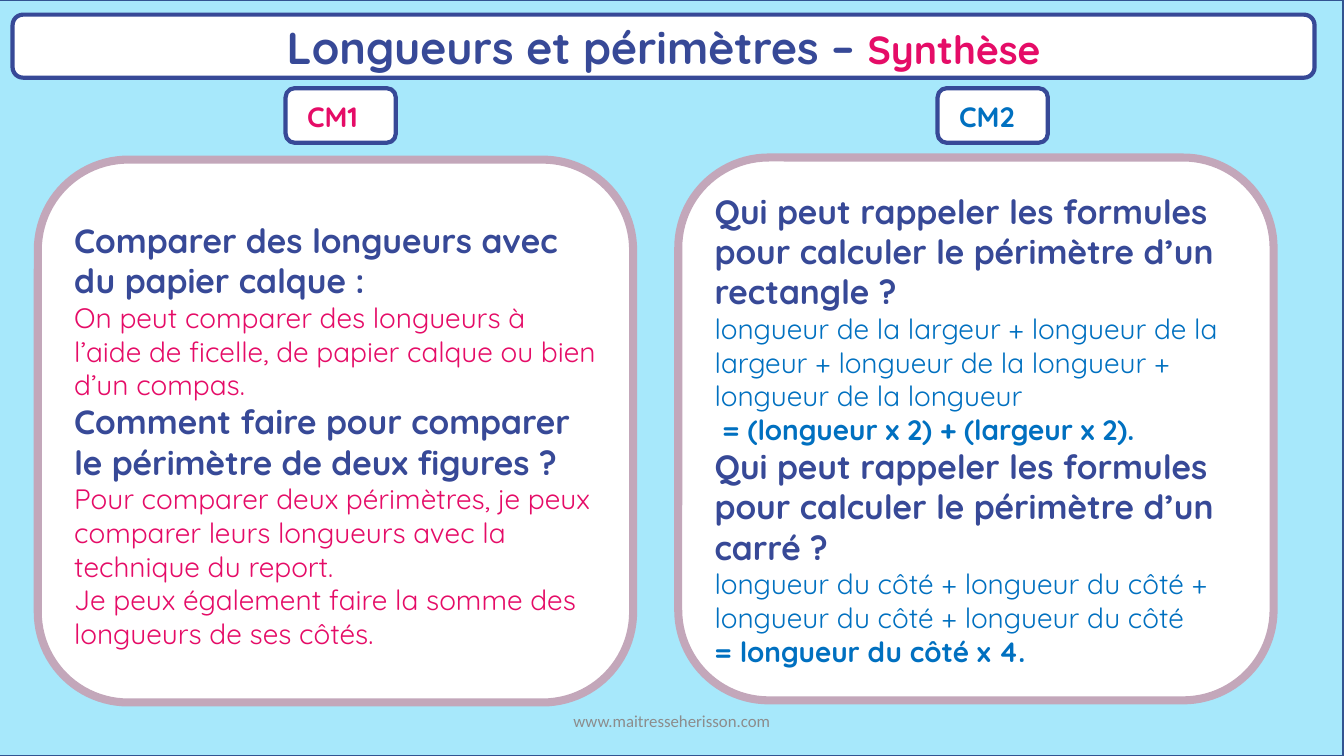
from pptx import Presentation
from pptx.dml.color import RGBColor
from pptx.enum.shapes import MSO_SHAPE
from pptx.enum.text import MSO_ANCHOR, PP_ALIGN
from pptx.util import Pt

RECTANGLE = MSO_SHAPE.RECTANGLE
ROUNDED = MSO_SHAPE.ROUNDED_RECTANGLE
MIDDLE = MSO_ANCHOR.MIDDLE
LEFT, CENTER = PP_ALIGN.LEFT, PP_ALIGN.CENTER
PX = 9525

NAVY, PINK, BLUE = "374997", "E50C67", "0070C0"
WHITE, SKY, MAUVE, GRAY = "FFFFFF", "A7E8FB", "C3A7BA", "8C8C8C"

deck = Presentation()
deck.slide_width, deck.slide_height = 1280 * PX, 720 * PX
page = deck.slides.add_slide(deck.slide_layouts[6])


def add_box(kind, left, top, width, height, fill, line, weight):
    box = page.shapes.add_shape(kind, left * PX, top * PX, width * PX, height * PX)
    box.shadow.inherit = False
    box.fill.solid()
    box.fill.fore_color.rgb = RGBColor.from_string(fill)
    box.line.color.rgb = RGBColor.from_string(line)
    box.line.width = Pt(weight)
    box.text_frame.word_wrap = True
    box.text_frame.vertical_anchor = MIDDLE
    return box


def add_span(para, text, size=20, color=NAVY, bold=False, font="Quicksand", align=LEFT):
    para.alignment = align
    span = para.add_run()
    span.text = text
    span.font.name = font
    span.font.size = Pt(size)
    span.font.bold = bold
    span.font.color.rgb = RGBColor.from_string(color)


add_box(RECTANGLE, -1, 0, 1280, 720, SKY, "325491", 1)

title = add_box(ROUNDED, 12, 14, 1240, 60, WHITE, NAVY, 3)
heading = title.text_frame.paragraphs[0]
add_span(heading, "Longueurs et périmètres – ", size=32, bold=True, align=CENTER)
add_span(heading, "Synthèse", size=28, color=PINK, bold=True, align=CENTER)

question = {"size": 24, "bold": True}
cm1_answer = {"color": PINK}
cm2_answer = {"color": BLUE}
cm2_result = {"color": BLUE, "bold": True}

cm1_lines = [
    ("Comparer des longueurs avec du papier calque :", question),
    ("On peut comparer des longueurs à l’aide de ficelle, de papier calque ou bien d’un compas.", cm1_answer),
    ("Comment faire pour comparer le périmètre de deux figures ?", question),
    ("Pour comparer deux périmètres, je peux comparer leurs longueurs avec la technique du report.", cm1_answer),
    ("Je peux également faire la somme des longueurs de ses côtés.", cm1_answer),
]
cm2_lines = [
    ("Qui peut rappeler les formules pour calculer le périmètre d’un rectangle ?", question),
    ("longueur de la largeur + longueur de la largeur + longueur de la longueur + longueur de la longueur", cm2_answer),
    (" = (longueur x 2) + (largeur x 2).", cm2_result),
    ("Qui peut rappeler les formules pour calculer le périmètre d’un carré ?", question),
    ("longueur du côté + longueur du côté + longueur du côté + longueur du côté", cm2_answer),
    ("= longueur du côté x 4.", cm2_result),
]

levels = [
    ("CM1", PINK, 272, 36, 152, 12, cm1_lines),
    ("CM2", BLUE, 893, 646, 150, 5, cm2_lines),
]
for level, color, badge_left, panel_left, panel_top, inset_top, lines in levels:
    panel = add_box(ROUNDED, panel_left, panel_top, 567, 517, WHITE, MAUVE, 5.75)
    panel.text_frame.margin_top = inset_top * PX
    for index, (text, style) in enumerate(lines):
        para = panel.text_frame.add_paragraph() if index else panel.text_frame.paragraphs[0]
        add_span(para, text, **style)

    add_box(ROUNDED, badge_left, 84, 105, 52, WHITE, NAVY, 3)
    label = page.shapes.add_textbox((badge_left + 11) * PX, 90 * PX, 81 * PX, 42 * PX)
    label.text_frame.word_wrap = True
    add_span(label.text_frame.paragraphs[0], level, color=color, bold=True)

footer = page.shapes.add_textbox(424 * PX, 667 * PX, 432 * PX, 38 * PX)
footer.text_frame.word_wrap = True
footer.text_frame.vertical_anchor = MIDDLE
add_span(footer.text_frame.paragraphs[0], "www.maitresseherisson.com",
         size=12, color=GRAY, font="Calibri", align=CENTER)

deck.save("out.pptx")
